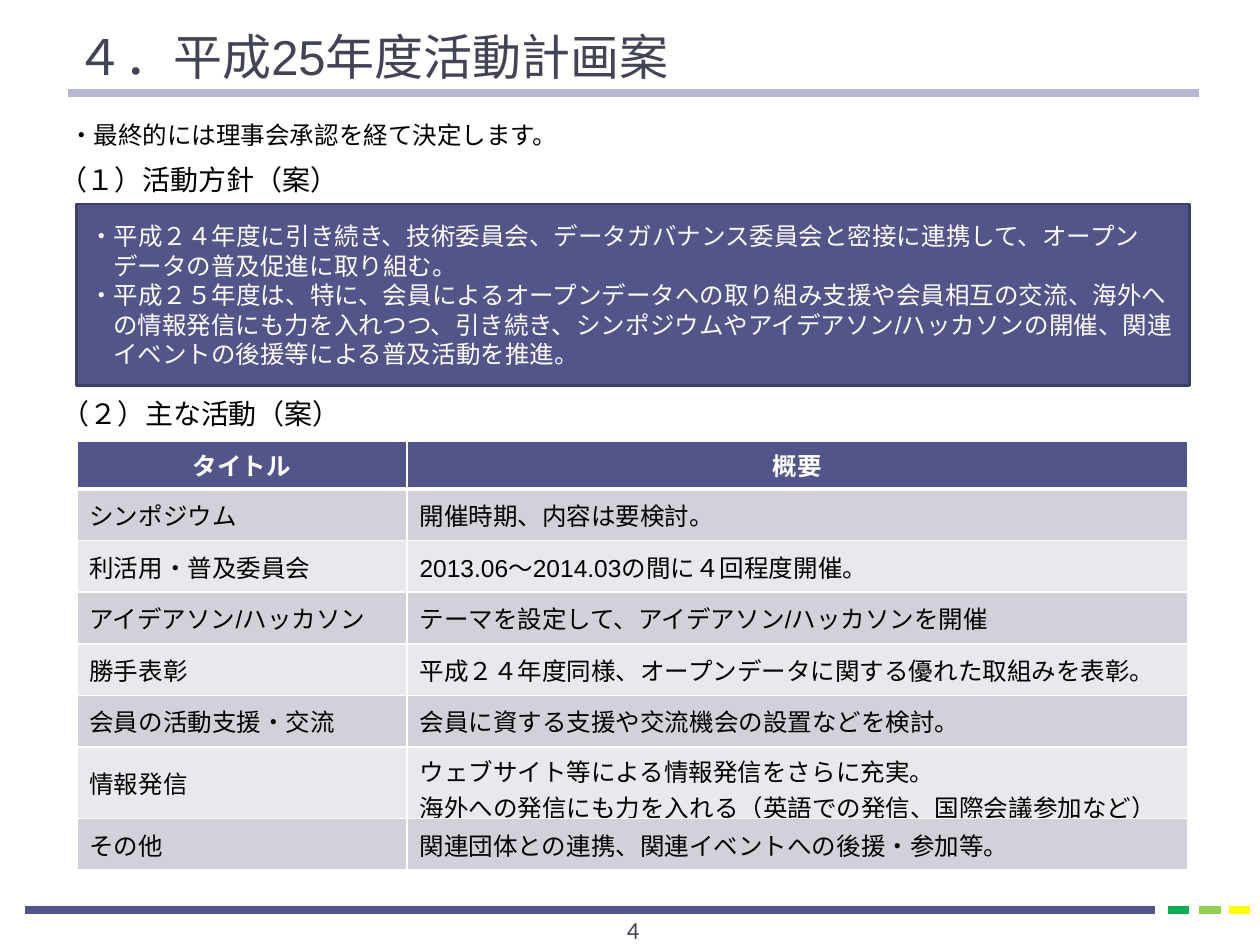
from lxml.etree import SubElement
from pptx import Presentation
from pptx.dml.color import RGBColor
from pptx.enum.shapes import MSO_CONNECTOR, MSO_SHAPE
from pptx.enum.text import MSO_ANCHOR, PP_ALIGN
from pptx.oxml.ns import qn
from pptx.util import Inches, Pt

INDIGO = RGBColor(0x53, 0x54, 0x8A)
DARK_INDIGO = RGBColor(0x3D, 0x3E, 0x66)
LAVENDER = RGBColor(0xB7, 0xB7, 0xD4)
SLATE = RGBColor(0x42, 0x44, 0x56)
GREEN = RGBColor(0x00, 0xB0, 0x50)
LIME = RGBColor(0x92, 0xD0, 0x50)
YELLOW = RGBColor(0xFF, 0xFF, 0x00)
BAND_DARK = RGBColor(0xD1, 0xD1, 0xDA)
BAND_LIGHT = RGBColor(0xE9, 0xE9, 0xED)
BLACK = RGBColor(0x00, 0x00, 0x00)
WHITE = RGBColor(0xFF, 0xFF, 0xFF)


def write(frame, lines, size, color, font="Arial", align=PP_ALIGN.LEFT, bold=False, hanging=0):
    for index, line in enumerate(lines):
        para = frame.paragraphs[0] if index == 0 else frame.add_paragraph()
        para.alignment = align
        if hanging:
            properties = para._p.get_or_add_pPr()
            properties.set("marL", str(Inches(hanging)))
            properties.set("indent", str(-Inches(hanging)))
        span = para.add_run()
        span.text = line
        span.font.size = Pt(size)
        span.font.name = font
        span.font.bold = bold
        span.font.color.rgb = color


deck = Presentation()
deck.slide_width = Inches(10)
deck.slide_height = Inches(7.5)
page = deck.slides.add_slide(deck.slide_layouts[5])

rules = [
    (0.2, 9.17, 7.22, INDIGO, 4.5),
    (9.27, 9.44, 7.22, GREEN, 4.5),
    (9.52, 9.69, 7.22, LIME, 4.5),
    (9.75, 9.92, 7.22, YELLOW, 4.5),
    (0.54, 9.52, 0.74, LAVENDER, 4.25),
]
for start, end, height, color, weight in rules:
    rule = page.shapes.add_connector(
        MSO_CONNECTOR.STRAIGHT, Inches(start), Inches(height), Inches(end), Inches(height))
    rule.line.color.rgb = color
    rule.line.width = Pt(weight)
    SubElement(rule._element.spPr, qn("a:effectLst"))

title = page.shapes.title
title.left, title.top, title.width, title.height = Inches(0.5), Inches(0.01), Inches(9), Inches(0.72)
title.text_frame.vertical_anchor = MSO_ANCHOR.BOTTOM
write(title.text_frame, ["４．平成25年度活動計画案"], 28, SLATE)

number = page.shapes.add_textbox(Inches(3.94), Inches(7.21), Inches(2.17), Inches(0.4))
write(number.text_frame, ["4"], 14, SLATE, "Calibri", PP_ALIGN.CENTER)

notice = page.shapes.add_textbox(Inches(0.45), Inches(0.9), Inches(8.84), Inches(0.34))
notice.text_frame.word_wrap = True
write(notice.text_frame, ["・最終的には理事会承認を経て決定します。"], 14, BLACK, hanging=0.3)

headings = [
    (0.37, 1.24, "（１）活動方針（案）"),
    (0.39, 3.1, "（２）主な活動（案）"),
]
for left, top, text in headings:
    heading = page.shapes.add_textbox(Inches(left), Inches(top), Inches(2.45), Inches(0.37))
    heading.text_frame.word_wrap = False
    write(heading.text_frame, [text], 16, BLACK, "Noto Sans CJK JP")

policy = page.shapes.add_shape(
    MSO_SHAPE.RECTANGLE, Inches(0.61), Inches(1.62), Inches(8.83), Inches(1.44))
policy.shadow.inherit = False
policy.fill.solid()
policy.fill.fore_color.rgb = INDIGO
policy.line.color.rgb = DARK_INDIGO
policy.line.width = Pt(1.5)
policy.text_frame.word_wrap = True
policy.text_frame.vertical_anchor = MSO_ANCHOR.MIDDLE
write(policy.text_frame, [
    "・平成２４年度に引き続き、技術委員会、データガバナンス委員会と密接に連携して、オープンデータの普及促進に取り組む。",
    "・平成２５年度は、特に、会員によるオープンデータへの取り組み支援や会員相互の交流、海外への情報発信にも力を入れつつ、"
    "引き続き、シンポジウムやアイデアソン/ハッカソンの開催、関連イベントの後援等による普及活動を推進。",
], 14, WHITE, hanging=0.19)
for para in policy.text_frame.paragraphs:
    para.line_spacing = Pt(16.8)

activities = [
    ("タイトル", ["概要"]),
    ("シンポジウム", ["開催時期、内容は要検討。"]),
    ("利活用・普及委員会", ["2013.06～2014.03の間に４回程度開催。"]),
    ("アイデアソン/ハッカソン", ["テーマを設定して、アイデアソン/ハッカソンを開催"]),
    ("勝手表彰", ["平成２４年度同様、オープンデータに関する優れた取組みを表彰。"]),
    ("会員の活動支援・交流", ["会員に資する支援や交流機会の設置などを検討。"]),
    ("情報発信", [
        "ウェブサイト等による情報発信をさらに充実。",
        "海外への発信にも力を入れる（英語での発信、国際会議参加など）",
    ]),
    ("その他", ["関連団体との連携、関連イベントへの後援・参加等。"]),
]
table = page.shapes.add_table(
    len(activities), 2, Inches(0.61), Inches(3.5), Inches(8.82), Inches(3.25)).table
table.columns[0].width = Inches(2.62)
table.columns[1].width = Inches(6.2)
for row, (name, summary) in enumerate(activities):
    header = row == 0
    table.rows[row].height = Inches(0.38 if header else 0.41)
    for column, lines in enumerate([[name], summary]):
        cell = table.cell(row, column)
        cell.vertical_anchor = MSO_ANCHOR.MIDDLE
        write(cell.text_frame, lines, 14, WHITE if header else BLACK,
              align=PP_ALIGN.CENTER if header else PP_ALIGN.LEFT, bold=header)
        properties = cell._tc.get_or_add_tcPr()
        for side in ("L", "R", "T", "B"):
            thick = (header and side == "B") or (row == 1 and side == "T")
            border = SubElement(properties, qn(f"a:ln{side}"), w=str(Pt(3 if thick else 1)))
            SubElement(SubElement(border, qn("a:solidFill")), qn("a:srgbClr"), val=str(WHITE))
        cell.fill.solid()
        cell.fill.fore_color.rgb = INDIGO if header else BAND_DARK if row % 2 else BAND_LIGHT

deck.save("out.pptx")
